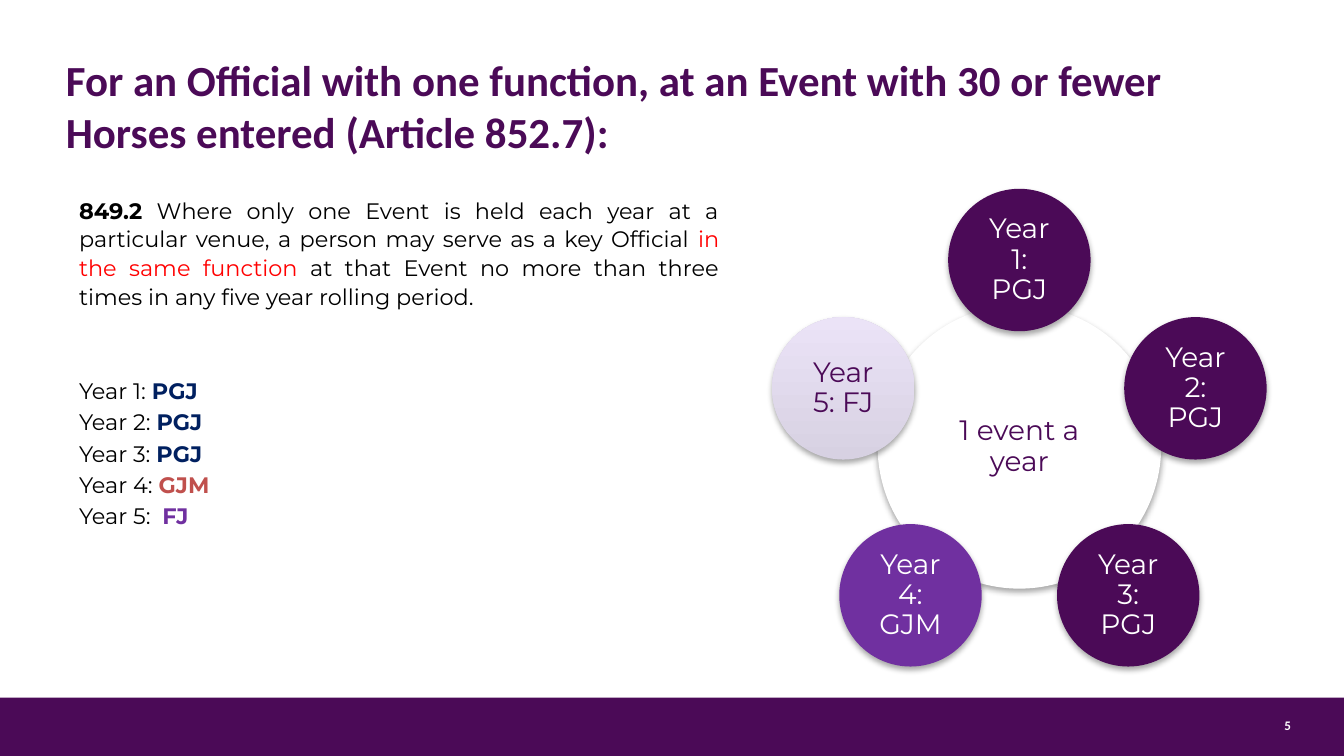
from math import cos, sin, tau
from lxml.etree import SubElement
from pptx import Presentation
from pptx.dml.color import RGBColor
from pptx.enum.shapes import MSO_SHAPE as Shape
from pptx.enum.text import MSO_ANCHOR as Anchor, PP_ALIGN as Align
from pptx.oxml.ns import qn
from pptx.util import Pt

PX = 4572
PLUM, WHITE, BLACK = "4B0A57", "FFFFFF", "000000"
NAVY, RED, BRICK, VIOLET = "002060", "FF0000", "C0504D", "7030A0"


def rgb(code):
    return RGBColor.from_string(code)


def style(run, face, size, color, bold=False):
    font = run.font
    font.name, font.size, font.bold = face, Pt(size), bold
    font.color.rgb = rgb(color)


deck = Presentation()
deck.slide_width, deck.slide_height = 2000 * PX, 1125 * PX
slide = deck.slides.add_slide(deck.slide_layouts[6])
shapes = slide.shapes

band = shapes.add_shape(Shape.RECTANGLE, 0, 1038 * PX, 2000 * PX, 87 * PX)
band.shadow.inherit = False
band.fill.solid()
band.fill.fore_color.rgb = rgb(PLUM)
band.line.fill.background()

title = "For an Official with one function, at an Event with 30 or fewer Horses entered (Article 852.7):"
labels = [
    (1898, 1058, 36, 46, "5", 7, WHITE, Align.CENTER),
    (98, 70, 1814, 210, title, 23, PLUM, Align.LEFT),
]
for x, y, w, h, text, size, color, align in labels:
    frame = shapes.add_textbox(x * PX, y * PX, w * PX, h * PX).text_frame
    frame.word_wrap = True
    frame.margin_left = frame.margin_right = 0
    frame.text = text
    para = frame.paragraphs[0]
    para.alignment = align
    style(para.runs[0], "Calibri", size, color, True)

body = shapes.add_textbox(98 * PX, 280 * PX, 992 * PX, 656 * PX).text_frame
body.word_wrap = True
rule = body.paragraphs[0]
rule.alignment = Align.JUSTIFY
rule.line_spacing = 1.07
rule.space_after = Pt(8)
parts = [
    ("849.2", BLACK, True),
    (" Where only one Event is held each year at a particular venue, a person may serve as a key Official ", BLACK, False),
    ("in the same function", RED, False),
    (" at that Event no more than three times in any five year rolling period. ", BLACK, False),
]
for text, color, bold in parts:
    run = rule.add_run()
    run.text = text
    style(run, "Montserrat", 12, color, bold)

years = [
    ("Year 1: ", "PGJ", NAVY),
    ("Year 2: ", "PGJ", NAVY),
    ("Year 3: ", "PGJ", NAVY),
    ("Year 4: ", "GJM", BRICK),
    ("Year 5:  ", "FJ", VIOLET),
]
for i, (year, role, color) in enumerate(years):
    para = body.add_paragraph()
    para.space_before = Pt(2.4 if i else 28)
    for text, tint, bold in [(year, BLACK, False), (role, color, True)]:
        run = para.add_run()
        run.text = text
        style(run, "Montserrat", 12, tint, bold)

mid_x, mid_y, reach = 1517, 663, 276
discs = [(mid_x, 665, 422, "1 event a year", WHITE, PLUM, 24)]
looks = [(PLUM, WHITE, 24)] * 3 + [(VIOLET, WHITE, 24), (None, PLUM, 12)]
for i, look in enumerate(looks):
    turn = tau * i / len(looks)
    x = round(mid_x + reach * sin(turn))
    y = round(mid_y - reach * cos(turn))
    year, role, tint = years[i]
    discs.append((x, y, 212, year.strip() + " " + role, *look))

for x, y, size, text, color, ink, inset in discs:
    half = size // 2
    disc = shapes.add_shape(Shape.OVAL, (x - half) * PX, (y - half) * PX, size * PX, size * PX)
    if color:
        disc.fill.solid()
        disc.fill.fore_color.rgb = rgb(color)
    else:
        disc.fill.gradient()
        disc.fill.gradient_angle = 90
        for stop, tint, spot in zip(disc.fill.gradient_stops, ["D7D1E2", "EBE3F7"], [0, 1]):
            stop.color.rgb = rgb(tint)
            stop.position = spot
    disc.line.fill.background()
    disc.shadow.inherit = False
    glow = disc._element.spPr.find(qn("a:effectLst"))
    shade = SubElement(glow, qn("a:outerShdw"), blurRad="40000", dist="23000", dir="5400000", rotWithShape="0")
    dark = SubElement(shade, qn("a:srgbClr"), val=BLACK)
    SubElement(dark, qn("a:alpha"), val="35000")
    frame = disc.text_frame
    frame.word_wrap = True
    frame.vertical_anchor = Anchor.MIDDLE
    frame.margin_left = frame.margin_right = inset * PX
    frame.margin_top = frame.margin_bottom = inset * PX
    frame.text = text
    para = frame.paragraphs[0]
    para.alignment = Align.CENTER
    para.line_spacing = 0.9
    style(para.runs[0], "Montserrat", 15, ink)

deck.save("out.pptx")
